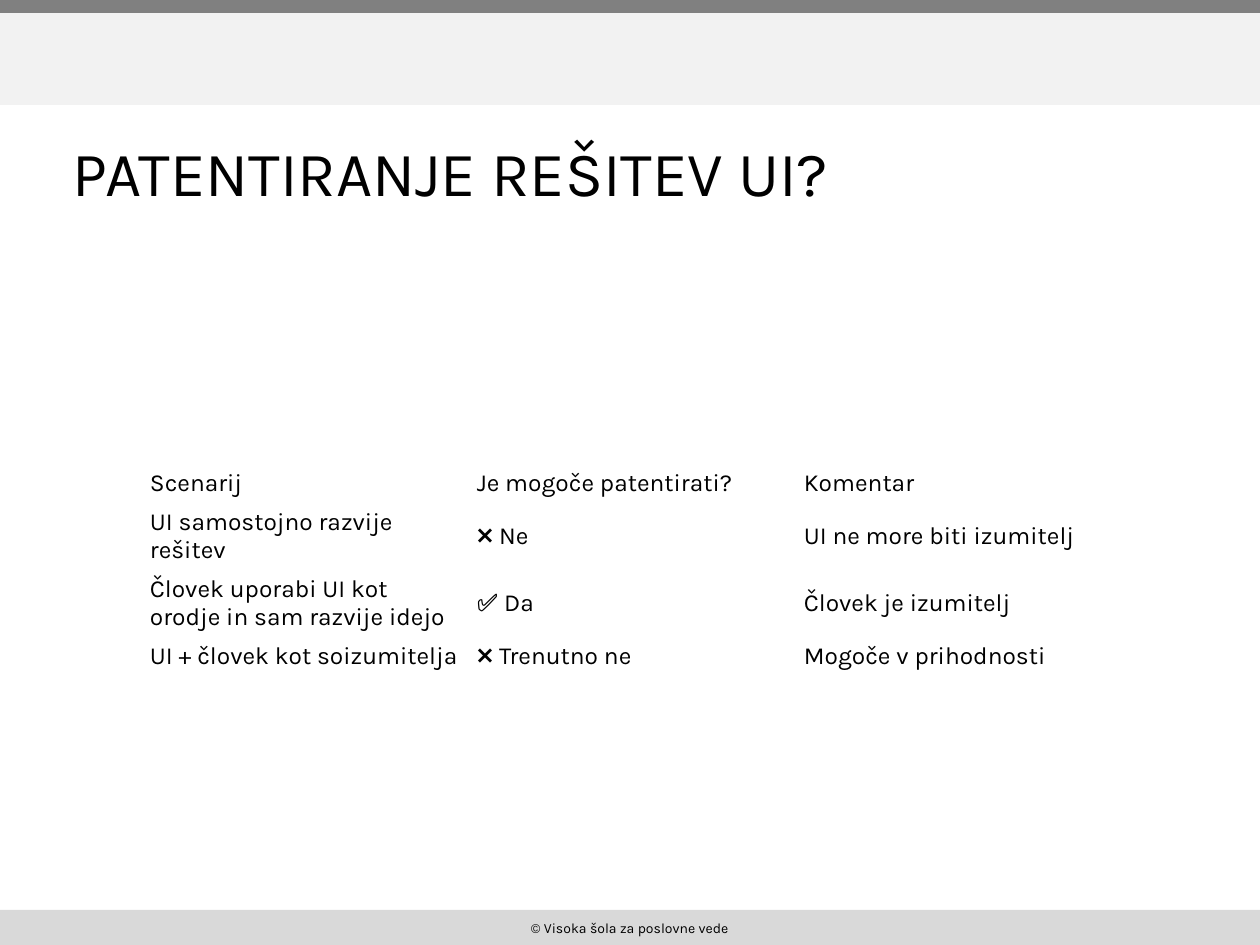
from typing import NamedTuple

from pptx import Presentation
from pptx.dml.color import RGBColor
from pptx.enum import shapes, text
from pptx.util import Emu, Pt

PX_PER_INCH = 126
FONT = "Karla"
BLACK = "000000"
SLIDE_W, SLIDE_H = 1260, 945


class Bar(NamedTuple):
    top: int
    height: int
    fill: str
    label: str = ""


BARS = [
    Bar(910, 35, "D9D9D9", "© Visoka šola za poslovne vede"),
    Bar(0, 105, "F2F2F2"),
    Bar(0, 13, "808080"),
]

ROWS = [
    ("Scenarij", "Je mogoče patentirati?", "Komentar"),
    ("UI samostojno razvije rešitev", "❌ Ne", "UI ne more biti izumitelj"),
    ("Človek uporabi UI kot orodje in sam razvije idejo", "✅ Da", "Človek je izumitelj"),
    ("UI + človek kot soizumitelja", "❌ Trenutno ne", "Mogoče v prihodnosti"),
]
ROW_HEIGHTS = [38, 38, 67, 38]
COLUMN_W = 327


def px(n: int) -> Emu:
    return Emu(round(n * 914400 / PX_PER_INCH))


def color(value: str) -> RGBColor:
    return RGBColor.from_string(value)


def write(tf, content: str, size: int, align=text.PP_ALIGN.LEFT) -> None:
    tf.text = content
    tf.word_wrap = True
    p = tf.paragraphs[0]
    p.alignment = align
    for r in p.runs:
        r.font.name = FONT
        r.font.size = Pt(size)
        r.font.bold = False
        r.font.color.rgb = color(BLACK)


def draw_bar(s, bar: Bar) -> None:
    sp = s.shapes.add_shape(
        shapes.MSO_SHAPE.RECTANGLE, 0, px(bar.top), px(SLIDE_W), px(bar.height)
    )
    sp.shadow.inherit = False
    sp.fill.solid()
    sp.fill.fore_color.rgb = color(bar.fill)
    sp.line.fill.background()
    if bar.label:
        sp.text_frame.vertical_anchor = text.MSO_ANCHOR.MIDDLE
        write(sp.text_frame, bar.label, 8, text.PP_ALIGN.CENTER)


def draw_title(s, content: str) -> None:
    title = s.shapes.title
    title.left, title.top, title.width, title.height = px(60), px(106), px(1134), px(130)
    title.text_frame.vertical_anchor = text.MSO_ANCHOR.MIDDLE
    write(title.text_frame, content, 36)


def draw_table(s, rows: list[tuple[str, ...]]) -> None:
    columns = len(rows[0])
    table = s.shapes.add_table(
        len(rows), columns, px(141), px(464), px(COLUMN_W * columns), px(sum(ROW_HEIGHTS))
    ).table
    table.first_row = False
    table.horz_banding = False
    for column in table.columns:
        column.width = px(COLUMN_W)
    for row, height, values in zip(table.rows, ROW_HEIGHTS, rows):
        row.height = px(height)
        for cell, value in zip(row.cells, values):
            cell.fill.background()
            cell.vertical_anchor = text.MSO_ANCHOR.MIDDLE
            cell.margin_left = cell.margin_right = px(9)
            cell.margin_top = cell.margin_bottom = px(5)
            write(cell.text_frame, value, 14)


def main() -> None:
    prs = Presentation()
    prs.slide_width, prs.slide_height = px(SLIDE_W), px(SLIDE_H)
    s = prs.slides.add_slide(prs.slide_layouts[5])
    for bar in BARS:
        draw_bar(s, bar)
    draw_title(s, "PATENTIRANJE REŠITEV UI?")
    draw_table(s, ROWS)
    prs.save("out.pptx")


if __name__ == "__main__":
    main()
